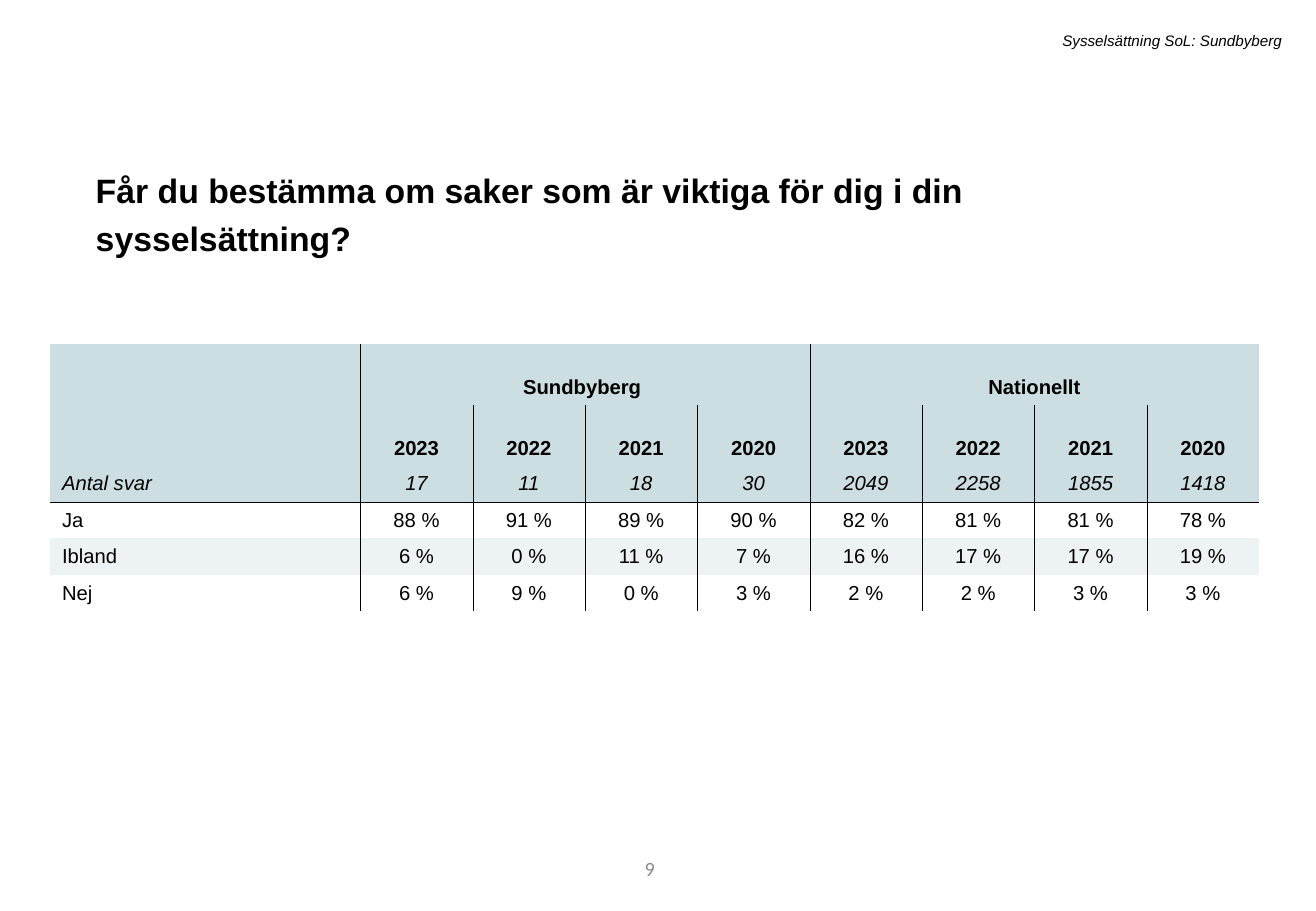
from lxml.etree import SubElement
from pptx import Presentation
from pptx.dml.color import RGBColor
from pptx.enum.text import MSO_ANCHOR, PP_ALIGN
from pptx.oxml.ns import qn
from pptx.util import Pt

BLACK, GREY, WHITE = "000000", "8C8C8C", "FFFFFF"
HEADER_FILL, BAND_FILL = "CCDEE1", "EDF3F4"
BORDER_TAGS = {"left": "a:lnL", "right": "a:lnR", "top": "a:lnT", "bottom": "a:lnB"}

COLUMN_WIDTHS = [184] + [66.6] * 8
ROW_HEIGHTS = [36, 36] + [21.6] * 4
LAST_COLUMN = len(COLUMN_WIDTHS) - 1
COUNT_ROW = 2  # last of the shaded header rows
ROW_FILLS = [HEADER_FILL] * 3 + [WHITE, BAND_FILL, WHITE]
YEARS = ["2023", "2022", "2021", "2020"]
ROWS = [
    ["", "Sundbyberg ", "", "", "", "Nationellt", "", "", ""],
    [""] + YEARS * 2,
    ["Antal svar", "17", "11", "18", "30", "2049", "2258", "1855", "1418"],
    ["Ja", "88 %", "91 %", "89 %", "90 %", "82 %", "81 %", "81 %", "78 %"],
    ["Ibland", "6 %", "0 %", "11 %", "7 %", "16 %", "17 %", "17 %", "19 %"],
    ["Nej", "6 %", "9 %", "0 %", "3 %", "2 %", "2 %", "3 %", "3 %"],
]


def color(hex_string):
    return RGBColor.from_string(hex_string)


def format_text(paragraph, size, align, font="Arial", fill=BLACK, bold=False, italic=False):
    paragraph.alignment = align
    for run in paragraph.runs:
        run.font.name = font
        run.font.size = Pt(size)
        run.font.bold = bold
        run.font.italic = italic
        run.font.color.rgb = color(fill)


def add_text(slide, text, left, top, width, height, size, align, **style):
    text_frame = slide.shapes.add_textbox(Pt(left), Pt(top), Pt(width), Pt(height)).text_frame
    text_frame.word_wrap = True
    text_frame.text = text
    format_text(text_frame.paragraphs[0], size, align, **style)
    return text_frame


def set_borders(cell, drawn_sides):
    """Draw a thin line on the given sides and none on the others."""
    properties = cell._tc.get_or_add_tcPr()
    for position, (side, tag) in enumerate(BORDER_TAGS.items()):
        line = SubElement(properties, qn(tag), w=str(Pt(0.25)))
        if side in drawn_sides:
            solid = SubElement(line, qn("a:solidFill"))
            SubElement(solid, qn("a:srgbClr"), val=BLACK)
        else:
            SubElement(line, qn("a:noFill"))
        properties.insert(position, line)  # borders come before the fill


def cell_borders(row, column):
    # The top row is ruled between groups only, the others between all columns
    ruled_after = {0, 4, LAST_COLUMN} if row == 0 else set(range(LAST_COLUMN))
    rules = {
        "left": column - 1 in ruled_after,
        "right": column in ruled_after,
        "top": row == COUNT_ROW + 1,
        "bottom": row == COUNT_ROW,
    }
    return {side for side, drawn in rules.items() if drawn}


def fill_cell(cell, row, column):
    cell.text_frame.text = ROWS[row][column]
    cell.vertical_anchor = MSO_ANCHOR.BOTTOM if row < COUNT_ROW else MSO_ANCHOR.MIDDLE
    format_text(
        cell.text_frame.paragraphs[0], 12,
        PP_ALIGN.CENTER if column else PP_ALIGN.LEFT,
        bold=row < COUNT_ROW, italic=row == COUNT_ROW,
    )
    cell.fill.solid()
    cell.fill.fore_color.rgb = color(ROW_FILLS[row])
    set_borders(cell, cell_borders(row, column))


def add_result_table(slide, left, top):
    table = slide.shapes.add_table(
        len(ROW_HEIGHTS), len(COLUMN_WIDTHS), Pt(left), Pt(top),
        Pt(sum(COLUMN_WIDTHS)), Pt(sum(ROW_HEIGHTS)),
    ).table
    table.first_row = False
    table.horz_banding = False
    for column, width in zip(table.columns, COLUMN_WIDTHS):
        column.width = Pt(width)
    for row, height in zip(table.rows, ROW_HEIGHTS):
        row.height = Pt(height)
    # Group headings span four years each
    for first in (1, 5):
        table.cell(0, first).merge(table.cell(0, first + 3))
    for row in range(len(ROW_HEIGHTS)):
        for column in range(len(COLUMN_WIDTHS)):
            fill_cell(table.cell(row, column), row, column)


def main():
    presentation = Presentation()
    presentation.slide_width = Pt(780)
    presentation.slide_height = Pt(540)
    slide = presentation.slides.add_slide(presentation.slide_layouts[6])

    # Page number
    number = add_text(slide, "9", 219.6, 500.4, 175.7, 28.8, 12, PP_ALIGN.RIGHT,
                      font="Calibri", fill=GREY)
    number.vertical_anchor = MSO_ANCHOR.MIDDLE

    # Question
    question = add_text(
        slide, "Får du bestämma om saker som är viktiga för dig i din sysselsättning?",
        49.7, 92.2, 676.8, 33.8, 20, PP_ALIGN.LEFT, bold=True)
    question.paragraphs[0].line_spacing = 1.2
    question.paragraphs[0].space_before = Pt(10)

    # Answers by year
    add_result_table(slide, 29.6, 203.9)

    # Survey name
    add_text(slide, "Sysselsättning SoL: Sundbyberg", 128.9, 15.1, 637.9, 18, 9,
             PP_ALIGN.RIGHT, italic=True)

    presentation.save("out.pptx")


if __name__ == "__main__":
    main()
